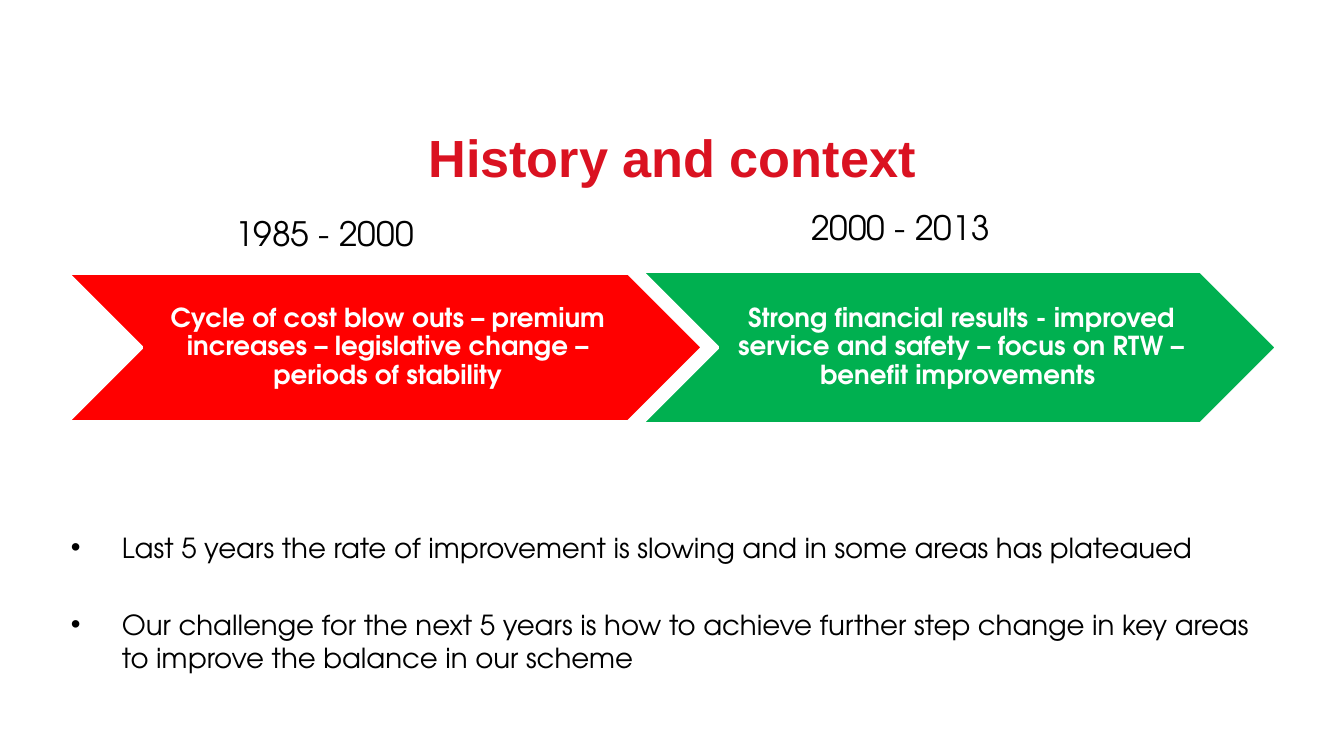
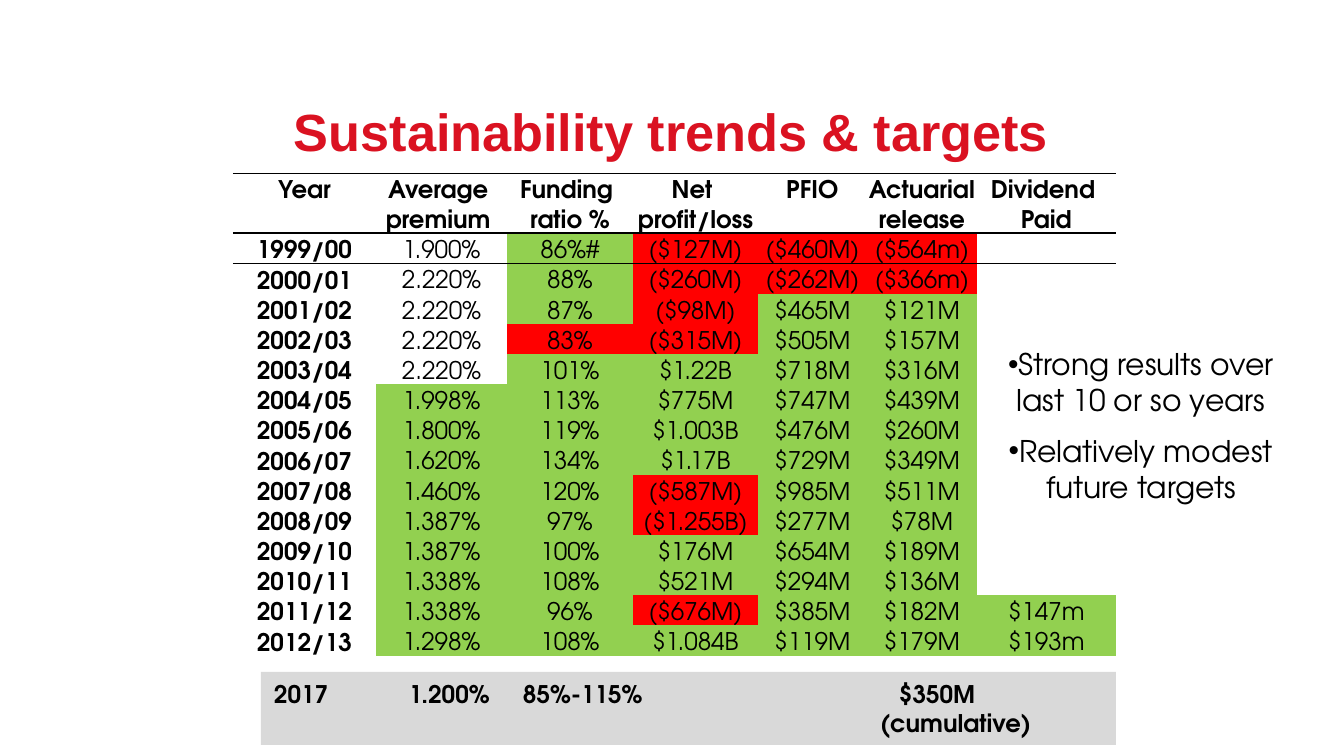
import lxml.etree
import pptx
import pptx.dml.color
import pptx.enum.shapes
import pptx.enum.text
import pptx.oxml.ns
import pptx.util

SCALE = 9144000 / 1344
TITLE_FONT = "Arial"
BODY_FONT = "TeX Gyre Adventor"
BLACK, WHITE, GREY = "000000", "FFFFFF", "D9D9D9"
TITLE_RED, RED, GREEN, LIGHT_GREEN = "DA1221", "FF0000", "00B050", "92D050"
CENTER = pptx.enum.text.PP_ALIGN.CENTER
TOP = pptx.enum.text.MSO_ANCHOR.TOP
MIDDLE = pptx.enum.text.MSO_ANCHOR.MIDDLE
BOTTOM = pptx.enum.text.MSO_ANCHOR.BOTTOM
NO_GRID = "{2D5ABB26-0587-4C30-8999-92F81FD0307C}"
INSETS = (13, 7, 13, 7)

PERIODS = [
    ("1985 - 2000", (222, 206, 246, 54), (67, 273, 636, 149), (75, 0, 487, 149), RED,
     "Cycle of cost blow outs – premium increases – legislative change – "
     "periods of stability"),
    ("2000 - 2013", (798, 200, 246, 54), (641, 271, 636, 153), (77, 0, 482, 153), GREEN,
     "Strong financial results - improved service and safety – focus on RTW – "
     "benefit improvements "),
]
CHALLENGES = [
    "Last 5 years the rate of improvement is slowing and in some areas has plateaued",
    "Our challenge for the next 5 years is how to achieve further step change in key "
    "areas to improve the balance in our scheme",
]
COLUMN_WIDTHS = [143, 131, 126, 125, 109, 110, 139]
HEADINGS = [
    ["Year", "Average ", "Funding ", "Net ", "PFIO", "Actuarial ", "Dividend "],
    ["", "premium ", "ratio %", "profit/loss", "", "release", "Paid"],
]
RESULTS = [
    ["1999/00", "1.900%", "86%#", "($127M)", "($460M)", "($564m)", ""],
    ["2000/01", "2.220%", "88%", "($260M)", "($262M)", "($366m)", ""],
    ["2001/02", "2.220%", "87%", "($98M)", "$465M", "$121M", ""],
    ["2002/03", "2.220%", "83%", "($315M)", "$505M", "$157M", ""],
    ["2003/04", "2.220%", "101%", "$1.22B", "$718M", "$316M", ""],
    ["2004/05", "1.998%", "113%", "$775M", "$747M", "$439M", ""],
    ["2005/06", "1.800%", "119%", "$1.003B", "$476M", "$260M", ""],
    ["2006/07", "1.620%", "134%", "$1.17B", "$729M", "$349M", ""],
    ["2007/08", "1.460%", "120%", "($587M)", "$985M", "$511M", ""],
    ["2008/09", "1.387%", "97%", "($1.255B)", "$277M", "$78M", ""],
    ["2009/10", "1.387%", "100%", "$176M", "$654M", "$189M", ""],
    ["2010/11", "1.338%", "108%", "$521M", "$294M", "$136M", ""],
    ["2011/12", "1.338%", "96%", "($676M)", "$385M", "$182M", "$147m"],
    ["2012/13", "1.298%", "108%", "$1.084B", "$119M", "$179M", "$193m"],
]
FIRST_LOWER_PREMIUM = "2004/05"
OUTCOMES = ["Strong results over last 10 or so years", "Relatively modest future targets"]
TARGET_LINES = [
    ("2017\t1.200%\t85%-115%\t$350M", (135, 249, 625)),
    ("\t(cumulative)", (606,)),
]


def px(length):
    return pptx.util.Emu(round(length * SCALE))


def color(value):
    return pptx.dml.color.RGBColor.from_string(value)


def add_element(parent, tag, **attributes):
    return lxml.etree.SubElement(parent, pptx.oxml.ns.qn(tag), attributes)


def add_run(paragraph, text, size, ink=BLACK, bold=False, font=BODY_FONT):
    run = paragraph.add_run()
    run.text = text
    run.font.size = pptx.util.Pt(size)
    run.font.name = font
    run.font.bold = bold
    run.font.color.rgb = color(ink)


def set_frame(frame, insets=INSETS, anchor=TOP):
    frame.word_wrap = True
    frame.vertical_anchor = anchor
    frame.margin_left, frame.margin_top, frame.margin_right, frame.margin_bottom = map(px, insets)
    return frame


def add_text_box(slide, box, insets=INSETS, anchor=TOP):
    return set_frame(slide.shapes.add_textbox(*map(px, box)).text_frame, insets, anchor)


def add_filled(slide, preset, box, fill):
    shape = slide.shapes.add_shape(preset, *map(px, box))
    shape.shadow.inherit = False
    shape.fill.solid()
    shape.fill.fore_color.rgb = color(fill)
    return shape


def next_paragraph(frame, index):
    return frame.add_paragraph() if index else frame.paragraphs[0]


def add_title(slide, box, text):
    heading = add_text_box(slide, box, anchor=MIDDLE).paragraphs[0]
    heading.alignment = CENTER
    add_run(heading, text, 28, TITLE_RED, True, TITLE_FONT)


def add_bullets(slide, box, items, size, gap, alignment=None, indent=0):
    frame = add_text_box(slide, box)
    for index, item in enumerate(items):
        bullet = next_paragraph(frame, index)
        bullet.alignment = alignment
        if index:
            bullet.space_before = pptx.util.Pt(gap)
        properties = bullet._p.get_or_add_pPr()
        properties.set("marL", str(px(indent)))
        properties.set("indent", str(-px(indent)))
        add_element(properties, "a:buFont", typeface=TITLE_FONT)
        add_element(properties, "a:buChar", char="•")
        add_run(bullet, item, size)


def add_period(slide, dates, dates_box, box, label_box, fill, summary):
    chevron = add_filled(slide, pptx.enum.shapes.MSO_SHAPE.CHEVRON, box, fill)
    chevron.line.color.rgb = color(WHITE)
    chevron.line.width = pptx.util.Pt(2)
    left, top, width, height = label_box
    label = add_text_box(slide, (box[0] + left, box[1] + top, width, height), (8, 3, 3, 3), MIDDLE)
    label.paragraphs[0].alignment = CENTER
    label.paragraphs[0].line_spacing = 0.9
    add_run(label.paragraphs[0], summary, 14, WHITE, True)
    add_run(add_text_box(slide, dates_box).paragraphs[0], dates, 18)


def result_fill(year, column, value):
    if not value or column == 0 or (column == 1 and year < FIRST_LOWER_PREMIUM):
        return None
    return RED if value.startswith("(") or value == "83%" else LIGHT_GREEN


def add_border(cell, side, width):
    line = lxml.etree.Element(pptx.oxml.ns.qn(side), w=str(pptx.util.Pt(width)))
    add_element(add_element(line, "a:solidFill"), "a:srgbClr", val=BLACK)
    cell._tc.get_or_add_tcPr().insert(0, line)


def fill_cell(cell, text, bold, fill):
    cell.margin_left = cell.margin_top = cell.margin_right = px(1)
    cell.margin_bottom = 0
    cell.vertical_anchor = BOTTOM
    paragraph = cell.text_frame.paragraphs[0]
    paragraph.alignment = CENTER
    if text:
        add_run(paragraph, text, 13, bold=bold)
    else:
        add_element(paragraph._p, "a:endParaRPr", sz="1300")
    if fill:
        cell.fill.solid()
        cell.fill.fore_color.rgb = color(fill)
    else:
        cell.fill.background()


def add_results(slide, left, top, heading_height, results_height):
    rows = HEADINGS + RESULTS
    box = (left, top, sum(COLUMN_WIDTHS), heading_height + results_height)
    table = slide.shapes.add_table(len(rows), len(COLUMN_WIDTHS), *map(px, box)).table
    table.first_row = table.horz_banding = False
    table._tbl.tblPr.find(pptx.oxml.ns.qn("a:tableStyleId")).text = NO_GRID
    for column, width in zip(table.columns, COLUMN_WIDTHS):
        column.width = px(width)
    for r, values in enumerate(rows):
        heading = r < len(HEADINGS)
        table.rows[r].height = px(
            heading_height / len(HEADINGS) if heading else results_height / len(RESULTS))
        for c, value in enumerate(values):
            cell = table.cell(r, c)
            fill = None if heading else result_fill(values[0], c, value)
            fill_cell(cell, value, heading or c == 0, fill)
            if r == 0:
                add_border(cell, "a:lnT", 0.5)
            elif r == len(HEADINGS) - 1:
                add_border(cell, "a:lnB", 1)
            elif r == len(HEADINGS):
                add_border(cell, "a:lnT", 1)


def add_targets(slide, box):
    band = add_filled(slide, pptx.enum.shapes.MSO_SHAPE.RECTANGLE, box, GREY)
    band.line.fill.background()
    frame = set_frame(band.text_frame)
    for index, (text, stops) in enumerate(TARGET_LINES):
        line = next_paragraph(frame, index)
        line.alignment = pptx.enum.text.PP_ALIGN.LEFT
        tabs = add_element(line._p.get_or_add_pPr(), "a:tabLst")
        for stop in stops:
            add_element(tabs, "a:tab", pos=str(px(stop)), algn="l")
        add_run(line, text, 13, bold=True)


def build_history(slide):
    add_title(slide, (67, 94, 1210, 126), "History and context")
    for period in PERIODS:
        add_period(slide, *period)
    add_bullets(slide, (58, 524, 1210, 188), CHALLENGES, 14.8, 23.5, indent=51)


def build_sustainability(slide):
    add_title(slide, (66, 87, 1210, 87), "Sustainability trends & targets")
    add_results(slide, 233, 173, 58, 416)
    add_bullets(slide, (988, 339, 306, 176), OUTCOMES, 16, 8, CENTER)
    add_targets(slide, (261, 672, 855, 73))


def main():
    deck = pptx.Presentation()
    deck.slide_width, deck.slide_height = px(1344), px(756)
    for build in (build_history, build_sustainability):
        build(deck.slides.add_slide(deck.slide_layouts[6]))
    deck.save("out.pptx")


if __name__ == "__main__":
    main()
